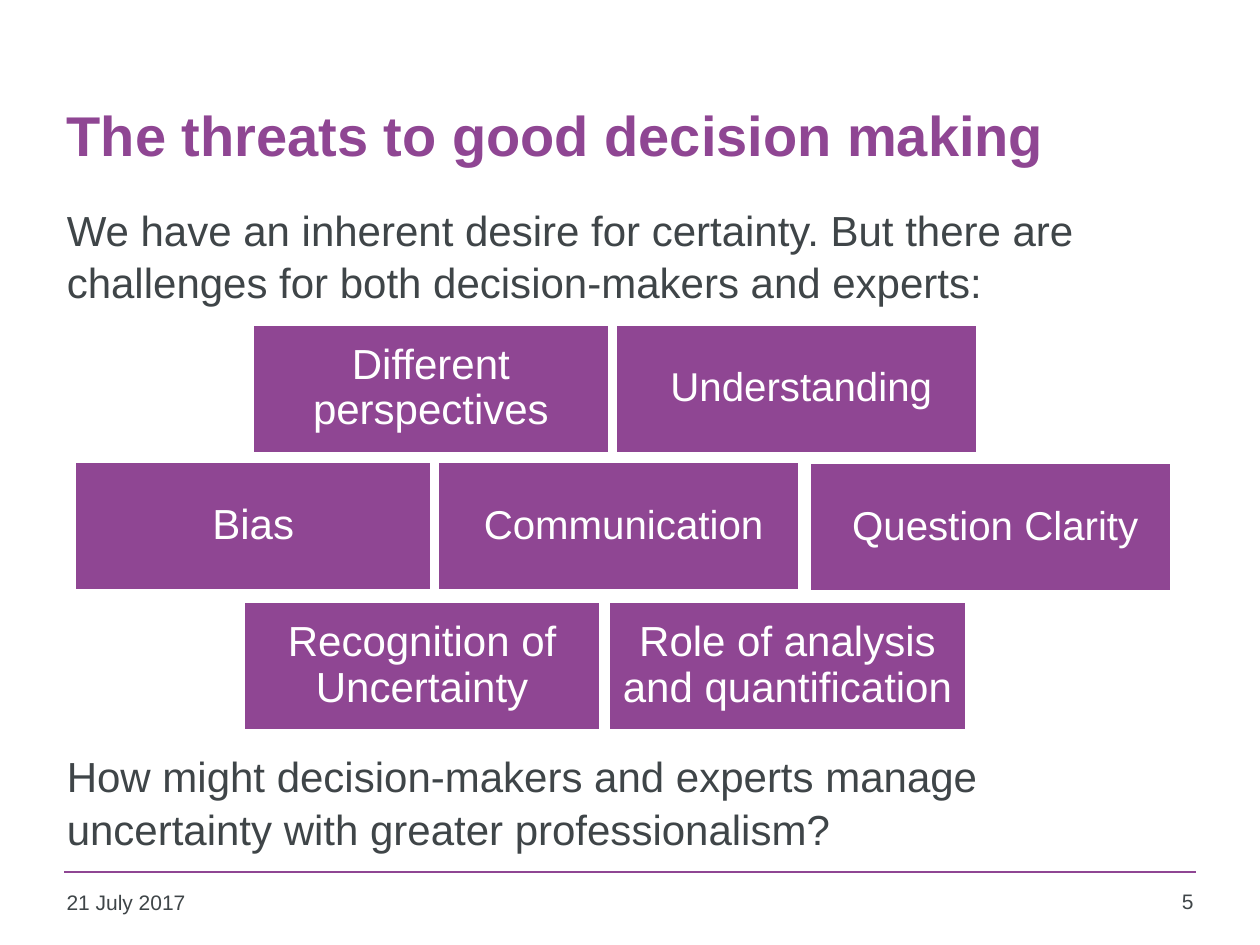
import pptx
import pptx.dml.color
import pptx.enum.shapes
import pptx.enum.text
import pptx.oxml.ns
import pptx.util
from pptx.util import Inches

PURPLE, GREY, WHITE = "8F4693", "3F4548", "FFFFFF"
ALIGN = pptx.enum.text.PP_ALIGN
ANCHOR = pptx.enum.text.MSO_ANCHOR

BOX_HEIGHT = 1.03
NARROW, WIDE = 2.84, 2.88
# label, left, top, width
THREATS = [
    ("Different perspectives", 2, 2.57, NARROW),
    ("Understanding", 4.88, 2.57, WIDE),
    ("Bias", 0.59, 3.66, NARROW),
    ("Communication", 3.47, 3.66, WIDE),
    ("Question Clarity", 6.42, 3.67, WIDE),
    ("Recognition of Uncertainty", 1.93, 4.77, NARROW),
    ("Role of analysis and quantification", 4.83, 4.77, NARROW),
]


def color(hex_string):
    return pptx.dml.color.RGBColor.from_string(hex_string)


def set_attributes(target, values):
    for name, value in values.items():
        setattr(target, name, value)


def place(shape, left, top, width, height):
    values = {"left": left, "top": top, "width": width, "height": height}
    set_attributes(shape, {name: Inches(value) for name, value in values.items()})


def write(paragraph, text, size, hex_string, bold=False, **paragraph_format):
    run = paragraph.add_run()
    run.text = text
    set_attributes(run.font, {"name": "Arial", "size": pptx.util.Pt(size), "bold": bold})
    run.font.color.rgb = color(hex_string)
    set_attributes(paragraph, paragraph_format)


def fill_title(slide):
    title = slide.shapes.title
    place(title, 0.43, 0.44, 9.07, 1.25)
    frame = title.text_frame
    set_attributes(frame, {"vertical_anchor": ANCHOR.MIDDLE, "word_wrap": True,
                           "auto_size": pptx.enum.text.MSO_AUTO_SIZE.NONE})
    write(frame.paragraphs[0], "The threats to good decision making", 32, PURPLE,
          bold=True, alignment=ALIGN.LEFT)


def remove_bullet(paragraph):
    properties = paragraph._p.get_or_add_pPr()
    properties.set("marL", "0")
    properties.set("indent", "0")
    properties.append(pptx.oxml.parse_xml(f"<a:buNone {pptx.oxml.ns.nsdecls('a')}/>"))


def fill_body(slide):
    """Set the opening and closing text, with room for the boxes between them."""
    body = slide.placeholders[1]
    place(body, 0.43, 1.55, 9.07, 5.47)
    frame = body.text_frame
    frame.auto_size = pptx.enum.text.MSO_AUTO_SIZE.NONE
    opening, closing = frame.paragraphs[0], frame.add_paragraph()
    for paragraph, text, space in (
        (opening, "We have an inherent desire for certainty. But there are "
                  "challenges for both decision-makers and experts:", 0),
        (closing, "How might decision-makers and experts manage "
                  "uncertainty with greater professionalism?", 252),
    ):
        write(paragraph, text, 24, GREY, line_spacing=1.05,
              space_before=pptx.util.Pt(space))
        remove_bullet(paragraph)


def add_threat_box(slide, label, left, top, width):
    box = slide.shapes.add_shape(
        pptx.enum.shapes.MSO_SHAPE.RECTANGLE,
        Inches(left), Inches(top), Inches(width), Inches(BOX_HEIGHT))
    box.shadow.inherit = False
    box.fill.solid()
    box.fill.fore_color.rgb = color(PURPLE)
    box.line.color.rgb = color(WHITE)
    box.line.width = pptx.util.Pt(2)
    is_wide = width == WIDE
    frame = box.text_frame
    margins = {f"margin_{side}": Inches(0.1) for side in ("left", "top", "right", "bottom")}
    set_attributes(frame, {**margins, "word_wrap": True, "vertical_anchor": ANCHOR.MIDDLE})
    if is_wide:
        frame.margin_left = Inches(0.18)
    write(frame.paragraphs[0], label, 23 if is_wide else 24, WHITE,
          alignment=ALIGN.CENTER, line_spacing=0.9)


def add_footer_text(slide, text, left, top, width, alignment):
    box = slide.shapes.add_textbox(Inches(left), Inches(top), Inches(width), Inches(0.36))
    box.text_frame.word_wrap = True
    write(box.text_frame.paragraphs[0], text, 12, GREY, alignment=alignment)


def add_footer_line(slide):
    line = slide.shapes.add_connector(
        pptx.enum.shapes.MSO_CONNECTOR.STRAIGHT,
        Inches(0.51), Inches(6.92), Inches(9.49), Inches(6.92))
    line.line.color.rgb = color(PURPLE)
    line.line.width = pptx.util.Pt(1)
    line._element.spPr.append(
        pptx.oxml.parse_xml(f"<a:effectLst {pptx.oxml.ns.nsdecls('a')}/>"))


def main():
    presentation = pptx.Presentation()
    set_attributes(presentation, {"slide_width": Inches(10), "slide_height": Inches(7.5)})
    slide = presentation.slides.add_slide(presentation.slide_layouts[1])
    add_footer_line(slide)
    fill_title(slide)
    add_footer_text(slide, "21 July 2017", 0.43, 7.01, 2.2, ALIGN.LEFT)
    add_footer_text(slide, "5", 8.86, 7, 0.71, ALIGN.RIGHT)
    fill_body(slide)
    for threat in THREATS:
        add_threat_box(slide, *threat)
    presentation.save("out.pptx")


if __name__ == "__main__":
    main()
